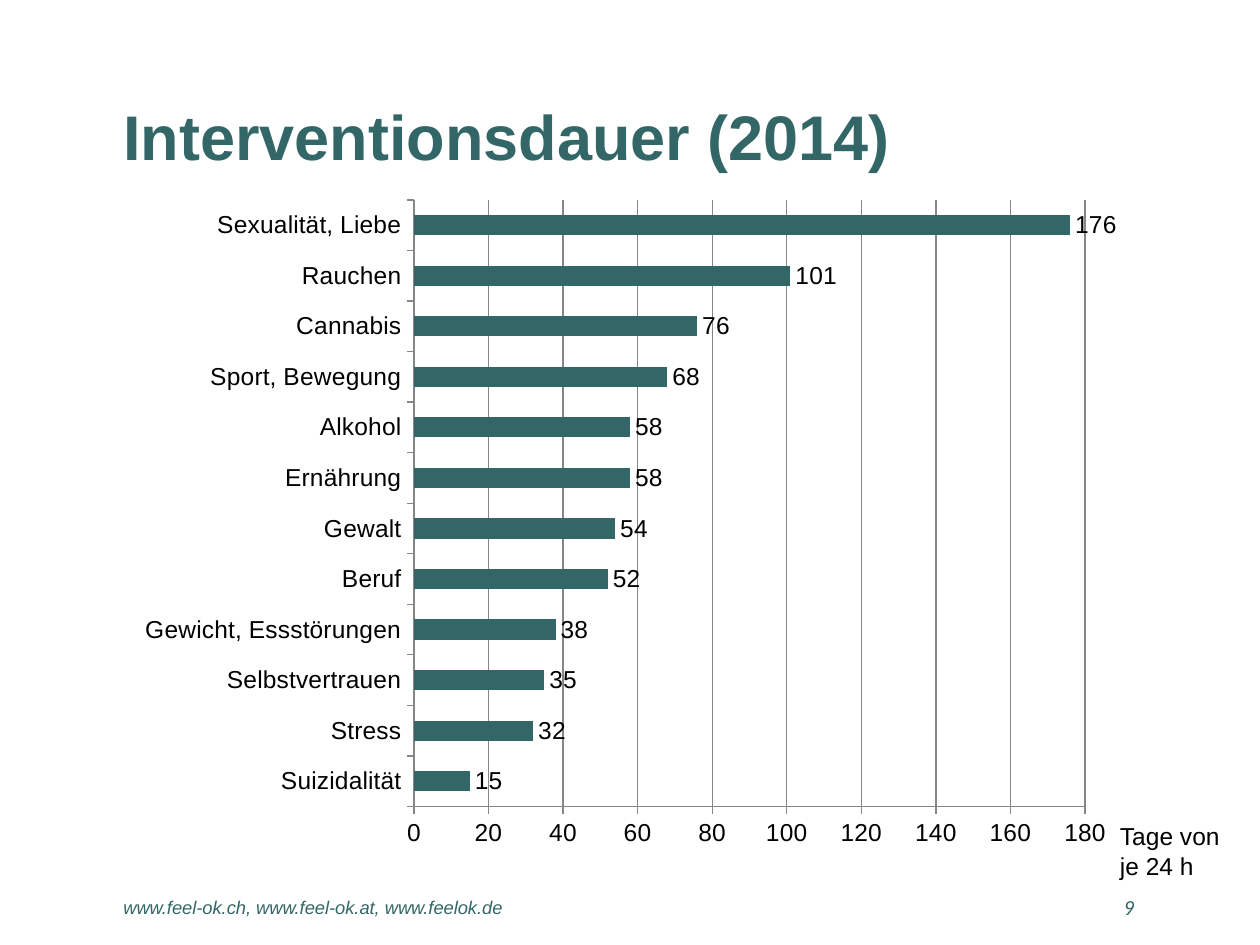
from dataclasses import dataclass

from lxml import etree
from pptx import Presentation
from pptx.chart.data import CategoryChartData
from pptx.dml.color import RGBColor
from pptx.enum.chart import XL_CHART_TYPE as ChartType
from pptx.enum.chart import XL_LABEL_POSITION as LabelPos
from pptx.enum.chart import XL_TICK_MARK as Tick
from pptx.enum.text import MSO_ANCHOR as Anchor
from pptx.enum.text import PP_ALIGN as Align
from pptx.oxml.ns import qn
from pptx.util import Inches, Pt


@dataclass(frozen=True)
class Theme:
    teal: RGBColor = RGBColor(0x33, 0x66, 0x66)
    black: RGBColor = RGBColor(0, 0, 0)
    grid: RGBColor = RGBColor(0x86, 0x86, 0x86)
    font: str = "Arial"
    number_font: str = "Lato"
    title: float = 36
    body: float = 14
    footer: float = 10.5
    number: float = 11


THEME = Theme()

# Days of 24 hours per topic, from the bottom bar up
DAYS = {
    "Suizidalität": 15,
    "Stress": 32,
    "Selbstvertrauen": 35,
    "Gewicht, Essstörungen": 38,
    "Beruf": 52,
    "Gewalt": 54,
    "Ernährung": 58,
    "Alkohol": 58,
    "Sport, Bewegung": 68,
    "Cannabis": 76,
    "Rauchen": 101,
    "Sexualität, Liebe": 176,
}


def style_font(font, size, color, name=THEME.font, bold=False, italic=False):
    font.name = name
    font.size = Pt(size)
    font.bold = bold
    font.italic = italic
    font.color.rgb = color


def place(sp, box):
    sp.left, sp.top, sp.width, sp.height = (Inches(v) for v in box)


def fill_text(tf, lines, size, color, align=Align.LEFT, inset=(0, 0), wrap=True, **style):
    tf.word_wrap = wrap
    tf.vertical_anchor = Anchor.TOP
    tf.margin_left = tf.margin_right = Inches(inset[0])
    tf.margin_top = tf.margin_bottom = Inches(inset[1])
    for i, line in enumerate(lines):
        p = tf.add_paragraph() if i else tf.paragraphs[0]
        p.alignment = align
        r = p.add_run()
        r.text = line
        style_font(r.font, size, color, **style)


def add_text(slide, box, lines, *args, **kwargs):
    sp = slide.shapes.add_textbox(*(Inches(v) for v in box))
    fill_text(sp.text_frame, lines, *args, **kwargs)


def add_title(slide, box):
    title = slide.shapes.title
    place(title, box)
    fill_text(title.text_frame, ["Interventionsdauer (2014)"], THEME.title, THEME.teal, bold=True)
    title.text_frame.paragraphs[0].line_spacing = 0.9


def set_plot_area(chart, x, y, w, h):
    """Fix the inner plot area, in fractions of the chart."""
    plot_area = chart.plots[0]._element.getparent()
    for old in plot_area.findall(qn("c:layout")):
        plot_area.remove(old)
    layout = etree.Element(qn("c:layout"))
    manual = etree.SubElement(layout, qn("c:manualLayout"))
    settings = (("layoutTarget", "inner"), ("xMode", "edge"), ("yMode", "edge"),
                ("x", x), ("y", y), ("w", w), ("h", h))
    for tag, value in settings:
        etree.SubElement(manual, qn(f"c:{tag}")).set("val", str(value))
    plot_area.insert(0, layout)


def add_duration_chart(slide, box):
    data = CategoryChartData()
    data.categories = list(DAYS)
    data.add_series("Series 1", list(DAYS.values()))
    frame = slide.shapes.add_chart(ChartType.BAR_CLUSTERED, *(Inches(v) for v in box), data)
    chart = frame.chart
    chart.has_legend = False
    chart.has_title = False
    style_font(chart.font, THEME.body, THEME.black)
    set_plot_area(chart, 0.29, 0.02, 0.67, 0.9)

    # Axes
    for axis in (chart.category_axis, chart.value_axis):
        axis.major_tick_mark = Tick.OUTSIDE
        axis.minor_tick_mark = Tick.NONE
        axis.format.line.color.rgb = THEME.grid
        style_font(axis.tick_labels.font, THEME.body, THEME.black)
    days = chart.value_axis
    days.minimum_scale, days.maximum_scale, days.major_unit = 0, 180, 20
    days.has_major_gridlines = True
    days.major_gridlines.format.line.color.rgb = THEME.grid

    # Bars and their values
    plot = chart.plots[0]
    plot.gap_width = 150
    plot.vary_by_categories = False
    bars = plot.series[0].format.fill
    bars.solid()
    bars.fore_color.rgb = THEME.teal
    plot.has_data_labels = True
    labels = plot.data_labels
    labels.show_value = True
    labels.position = LabelPos.OUTSIDE_END
    style_font(labels.font, THEME.body, THEME.black)


def add_footer(slide, box):
    left, top, width, height = box
    number_width = 1.02
    add_text(slide, (left, top, 6.06, height),
             ["www.feel-ok.ch, www.feel-ok.at, www.feelok.de"],
             THEME.footer, THEME.teal, italic=True)
    add_text(slide, (left + width - number_width, top, number_width, height), ["9"],
             THEME.number, THEME.teal, align=Align.RIGHT, name=THEME.number_font, italic=True)


def main():
    prs = Presentation()
    prs.slide_width, prs.slide_height = Inches(10), Inches(7.5)
    slide = prs.slides.add_slide(prs.slide_layouts[5])
    add_title(slide, (0.98, 0.84, 8.03, 0.63))
    add_footer(slide, (0.98, 7.11, 8.03, 0.26))
    add_duration_chart(slide, (0.98, 1.48, 7.95, 5.35))
    # Unit of the value axis
    add_text(slide, (8.79, 6.47, 1.05, 0.57), ["Tage von", "je 24 h"],
             THEME.body, THEME.black, inset=(0.1, 0.05), wrap=False)
    prs.save("out.pptx")


if __name__ == "__main__":
    main()
